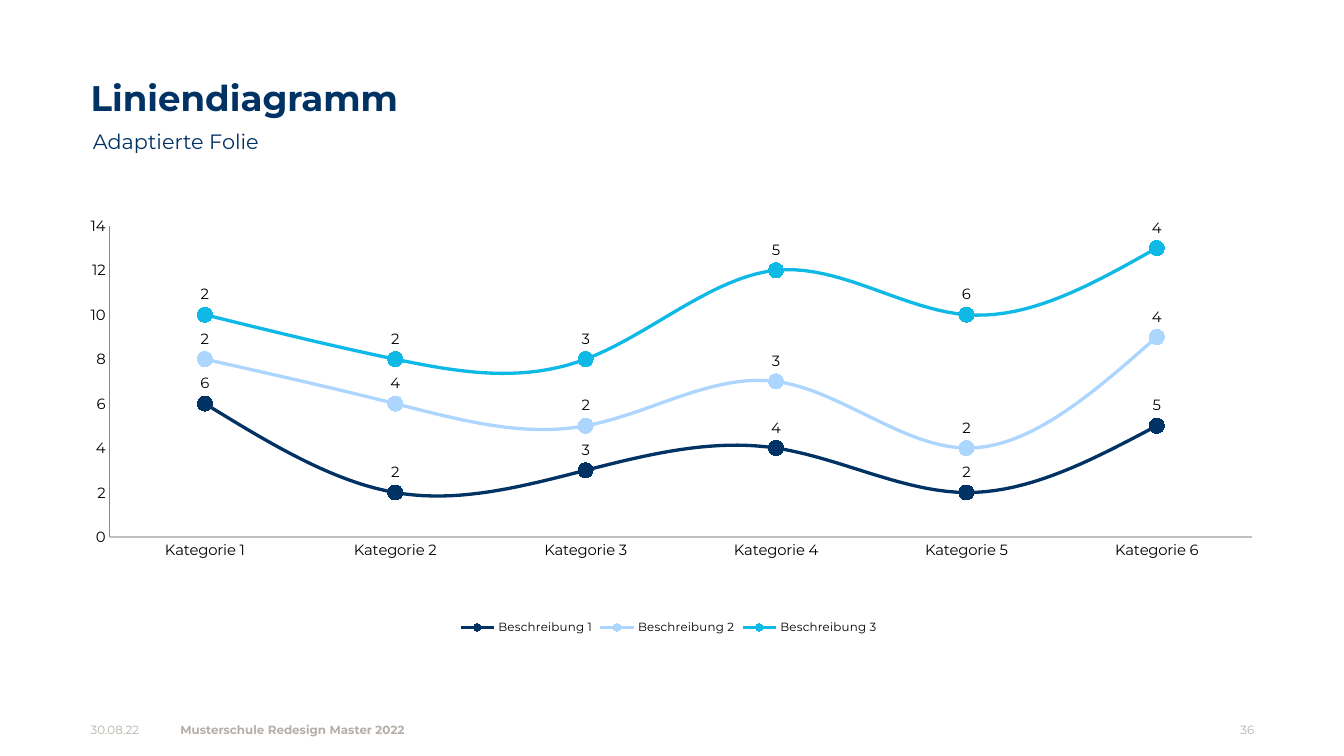
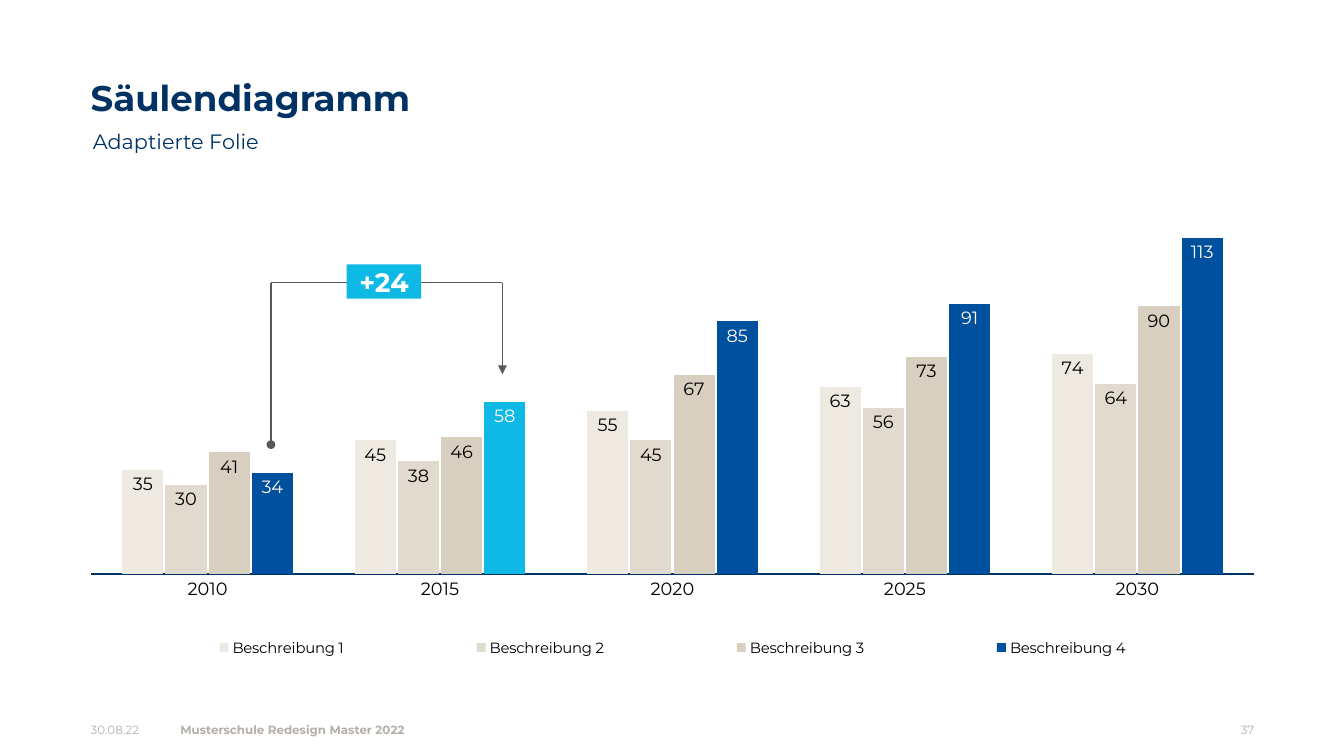
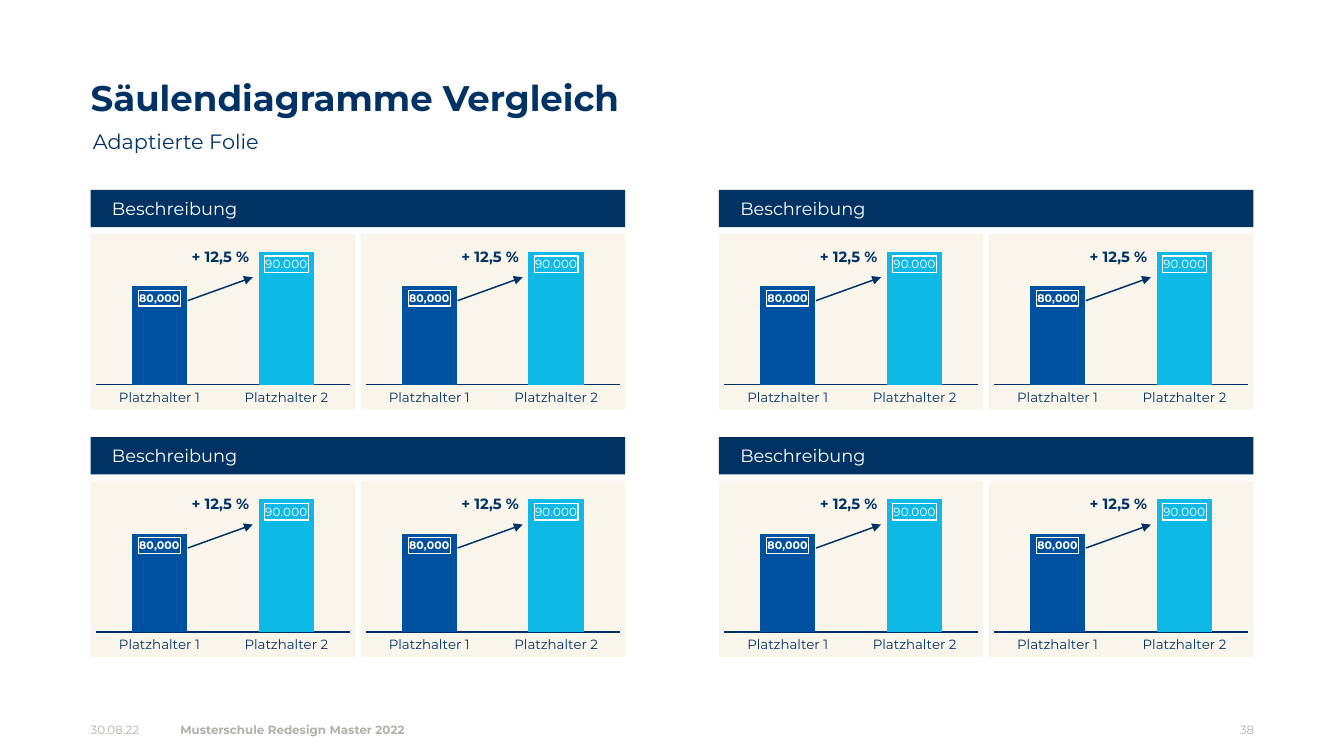
from dataclasses import dataclass

from lxml.etree import SubElement
from pptx import Presentation
from pptx.chart.data import CategoryChartData
from pptx.dml.color import RGBColor
from pptx.enum.chart import (XL_CHART_TYPE, XL_LABEL_POSITION, XL_LEGEND_POSITION,
                             XL_MARKER_STYLE, XL_TICK_LABEL_POSITION, XL_TICK_MARK)
from pptx.enum.shapes import MSO_CONNECTOR, MSO_SHAPE
from pptx.enum.text import MSO_ANCHOR, MSO_AUTO_SIZE, PP_ALIGN
from pptx.oxml.ns import qn
from pptx.util import Emu, Pt


@dataclass(frozen=True)
class Theme:
    font: str = "Montserrat"
    navy: str = "003264"
    blue: str = "0050A0"
    cyan: str = "0FB9E6"
    sky: str = "ADD6FF"
    sand_light: str = "EEEAE1"
    sand: str = "E1DBCF"
    sand_dark: str = "D8CFC1"
    cream: str = "FAF5EB"
    ivory: str = "FFFBF2"
    white: str = "FFFFFF"
    black: str = "000000"
    axis_gray: str = "BFBFBF"
    line_gray: str = "595959"
    footer: str = "B5AFA9"
    title_size: float = 24
    subtitle_size: float = 14
    badge_size: float = 18
    banner_size: float = 12
    column_size: float = 12
    text_size: float = 10
    panel_size: float = 9
    small_size: float = 8
    label_size: float = 7.4


THEME = Theme()
PX = 9144  # 100 px to the inch

# Content
SUBTITLE = "Adaptierte Folie"
DATE = "30.08.22"
FOOTER = "Musterschule Redesign Master 2022"
FIRST_PAGE = 36

LINE_TITLE = "Liniendiagramm"
LINE_CATEGORIES = [f"Kategorie {number}" for number in range(1, 7)]
LINE_SERIES = [
    ("Beschreibung 1", (6, 2, 3, 4, 2, 5), THEME.navy),
    ("Beschreibung 2", (2, 4, 2, 3, 2, 4), THEME.sky),
    ("Beschreibung 3", (2, 2, 3, 5, 6, 4), THEME.cyan),
]

COLUMN_TITLE = "Säulendiagramm"
COLUMN_CATEGORIES = ["2010", "2015", "2020", "2025", "2030"]
COLUMN_SERIES = [
    ("Beschreibung 1", (35, 45, 55, 63, 74), THEME.sand_light),
    ("Beschreibung 2", (30, 38, 45, 56, 64), THEME.sand),
    ("Beschreibung 3", (41, 46, 67, 73, 90), THEME.sand_dark),
    ("Beschreibung 4", (34, 58, 85, 91, 113), THEME.blue),
]
DIFFERENCE = "+24"

COMPARE_TITLE = "Säulendiagramme Vergleich"
BANNER = "Beschreibung"
GROWTH = "+ 12,5 %"
PANEL_CATEGORIES = ["Platzhalter 1", "Platzhalter 2"]
PANEL_SERIES = [("Series 1", (80000, 108000), THEME.navy)]
PANEL_LABEL = "90.000"


# Helpers
def px(*values):
    return [Emu(value * PX) for value in values]


def rgb(color):
    return RGBColor.from_string(color)


def set_fill(part, color):
    part.fill.solid()
    part.fill.fore_color.rgb = rgb(color)


def set_line(line, color, width):
    line.color.rgb = rgb(color)
    line.width = Pt(width)


def set_font(font, size, color=THEME.black, bold=False):
    font.name = THEME.font
    font.size = Pt(size)
    font.bold = bold
    font.color.rgb = rgb(color)


def write_text(shape, text, size, color, bold=False, align=PP_ALIGN.LEFT,
               anchor=MSO_ANCHOR.MIDDLE, left=0, right=0, wrap=True,
               line_spacing=None, bullet=True):
    frame = shape.text_frame
    frame.auto_size = MSO_AUTO_SIZE.NONE
    frame.word_wrap = wrap
    frame.vertical_anchor = anchor
    frame.margin_left, frame.margin_right = px(left, right)
    frame.margin_top = frame.margin_bottom = 0
    frame.text = text
    paragraph = frame.paragraphs[0]
    paragraph.alignment = align
    paragraph.space_before = Pt(0)
    if line_spacing:
        paragraph.line_spacing = Pt(line_spacing)
    if not bullet:
        properties = paragraph._p.get_or_add_pPr()
        properties.set("marL", "0")
        properties.set("indent", "0")
        SubElement(properties, qn("a:buNone"))
    set_font(paragraph.runs[0].font, size, color, bold)


def place(shape, box):
    shape.left, shape.top, shape.width, shape.height = px(*box)


def add_text(shapes, box, text, size, color, **options):
    write_text(shapes.add_textbox(*px(*box)), text, size, color, **options)


def add_box(shapes, box, color, text, size, **options):
    shape = shapes.add_shape(MSO_SHAPE.RECTANGLE, *px(*box))
    shape.shadow.inherit = False
    set_fill(shape, color)
    shape.line.fill.background()
    write_text(shape, text, size, THEME.white, **options)


def add_line(shapes, start, end, color, tail=None):
    connector = shapes.add_connector(MSO_CONNECTOR.STRAIGHT, *px(*start, *end))
    set_line(connector.line, color, 1)
    if tail:
        SubElement(connector.line._get_or_add_ln(), qn("a:tailEnd"), type=tail)
    SubElement(connector._element.spPr, qn("a:effectLst"))


def add_slide(presentation, title, page):
    slide = presentation.slides.add_slide(presentation.slide_layouts[1])
    heading, subtitle = slide.placeholders
    place(heading, (85, 71, 803, 40))
    write_text(heading, title, THEME.title_size, THEME.navy, bold=True,
               anchor=MSO_ANCHOR.TOP)
    place(subtitle, (85, 111, 803, 39))
    write_text(subtitle, SUBTITLE, THEME.subtitle_size, THEME.navy, left=2,
               line_spacing=20, bullet=False)
    for left, width, text, bold, align in (
            (85, 85, DATE, False, PP_ALIGN.LEFT),
            (169, 445, FOOTER, True, PP_ALIGN.LEFT),
            (1091, 85, str(page), False, PP_ALIGN.RIGHT)):
        add_text(slide.shapes, (left, 661, width, 47), text, THEME.small_size,
                 THEME.footer, bold=bold, align=align)
    return slide


# Chart helpers
def set_layout(element, index, x, y, width=None, height=None, inner=False):
    for old in element.findall(qn("c:layout")):
        element.remove(old)
    layout = element.makeelement(qn("c:layout"))
    element.insert(index, layout)
    manual = SubElement(layout, qn("c:manualLayout"))
    entries = [("layoutTarget", "inner")] if inner else []
    entries += [("xMode", "edge"), ("yMode", "edge"), ("x", x), ("y", y)]
    if width:
        entries += [("w", width), ("h", height)]
    for name, value in entries:
        SubElement(manual, qn(f"c:{name}"), val=str(value))


def add_legend(chart, size, **layout):
    chart.has_legend = True
    legend = chart.legend
    legend.position = XL_LEGEND_POSITION.BOTTOM
    legend.include_in_layout = False
    set_font(legend.font, size)
    set_layout(legend._element, 1, **layout)


def add_chart(slide, kind, box, categories, series, plot_box, maximum, size,
              color=THEME.black, axis=(THEME.navy, 1)):
    data = CategoryChartData()
    data.categories = categories
    for name, values, _ in series:
        data.add_series(name, values)
    chart = slide.shapes.add_chart(kind, *px(*box), data).chart
    chart.has_title = False
    chart.has_legend = False
    set_font(chart.font, size, color)
    chart.plots[0].vary_by_categories = False
    set_layout(chart._chartSpace.chart.plotArea, 0, *plot_box, inner=True)
    for chart_axis in (chart.category_axis, chart.value_axis):
        chart_axis.major_tick_mark = XL_TICK_MARK.NONE
        chart_axis.minor_tick_mark = XL_TICK_MARK.NONE
        chart_axis.has_major_gridlines = False
    set_line(chart.category_axis.format.line, *axis)
    chart.value_axis.minimum_scale = 0
    chart.value_axis.maximum_scale = maximum
    return chart


def add_labels(series, position, size, color=THEME.black, bold=False):
    labels = series.data_labels
    labels.show_value = True
    labels.position = position
    set_font(labels.font, size, color, bold)
    return labels


def outline_label(element, color):
    """Give a data label, or a set of them, a thin frame."""
    properties = element.makeelement(qn("c:spPr"))
    line = SubElement(properties, qn("a:ln"), w=str(Pt(0.75)))
    SubElement(SubElement(line, qn("a:solidFill")), qn("a:srgbClr"), val=color)
    followers = (qn("c:txPr"), qn("c:dLblPos"), qn("c:showLegendKey"))
    next(child for child in element if child.tag in followers).addprevious(properties)


# Slides
def build_line_slide(presentation, page):
    slide = add_slide(presentation, LINE_TITLE, page)
    chart = add_chart(slide, XL_CHART_TYPE.LINE_MARKERS_STACKED, (85, 171, 1091, 430),
                      LINE_CATEGORIES, LINE_SERIES, (0.016, 0.095, 0.982, 0.679), 14,
                      THEME.text_size, axis=(THEME.axis_gray, 2))
    chart.value_axis.major_unit = 2
    for series, (_, _, color) in zip(chart.plots[0].series, LINE_SERIES):
        series.smooth = True
        set_line(series.format.line, color, 2.25)
        series.marker.style = XL_MARKER_STYLE.CIRCLE
        series.marker.size = 10
        set_fill(series.marker.format, color)
        series.marker.format.line.color.rgb = rgb(THEME.white)
        add_labels(series, XL_LABEL_POSITION.ABOVE, THEME.text_size)
    add_legend(chart, THEME.small_size, x=0.314, y=0.945)


def build_column_slide(presentation, page):
    slide = add_slide(presentation, COLUMN_TITLE, page)
    chart = add_chart(slide, XL_CHART_TYPE.COLUMN_CLUSTERED, (85, 190, 1091, 432),
                      COLUMN_CATEGORIES, COLUMN_SERIES, (0, 0.032, 1, 0.775), 120,
                      THEME.column_size)
    plot = chart.plots[0]
    plot.gap_width, plot.overlap = 150, -5
    chart.value_axis.tick_label_position = XL_TICK_LABEL_POSITION.NONE
    chart.value_axis.format.line.fill.background()
    for series, (_, _, color) in zip(plot.series, COLUMN_SERIES):
        set_fill(series.format, color)
        label_color = THEME.ivory if color == THEME.blue else THEME.black
        add_labels(series, XL_LABEL_POSITION.INSIDE_END, THEME.column_size, label_color)
    set_fill(plot.series[-1].points[1].format, THEME.cyan)
    add_legend(chart, THEME.text_size, x=0, y=0.932, width=1, height=0.068)

    # Difference bracket between 2010 and 2015
    bracket = slide.shapes.add_group_shape().shapes
    left, right, top = 254, 471, 265
    add_line(bracket, (left, top), (left, 417), THEME.line_gray, tail="oval")
    add_line(bracket, (right, top), (right, 351), THEME.line_gray, tail="triangle")
    add_line(bracket, (left, top), (right, top), THEME.line_gray)
    add_box(bracket, (325, 248, 70, 32), THEME.cyan, DIFFERENCE, THEME.badge_size,
            bold=True, align=PP_ALIGN.CENTER, wrap=False)


def add_panel(slide, left, top):
    chart = add_chart(slide, XL_CHART_TYPE.COLUMN_STACKED, (left, top, 248, 165),
                      PANEL_CATEGORIES, PANEL_SERIES, (0.02, 0.02, 0.96, 0.84), 120000,
                      THEME.panel_size, THEME.navy)
    area = chart._chartSpace
    background = area.makeelement(qn("c:spPr"))
    area.chart.addnext(background)
    fill = SubElement(background, qn("a:solidFill"))
    SubElement(fill, qn("a:srgbClr"), val=THEME.cream)
    SubElement(SubElement(background, qn("a:ln")), qn("a:noFill"))
    chart.value_axis.visible = False
    plot = chart.plots[0]
    plot.gap_width, plot.overlap = 129, 100

    # Columns and framed labels
    series = plot.series[0]
    set_fill(series.format, THEME.navy)
    for point, color in enumerate((THEME.blue, THEME.cyan)):
        set_fill(series.points[point].format, color)
    labels = add_labels(series, XL_LABEL_POSITION.INSIDE_END, THEME.label_size,
                        THEME.white, bold=True)
    labels.number_format = "#,##0"
    labels.number_format_is_linked = False
    outline_label(labels._element, THEME.white)
    label = series.points[1].data_label
    label.text_frame.text = PANEL_LABEL
    set_font(label.text_frame.paragraphs[0].runs[0].font, THEME.small_size, THEME.white)
    label.position = XL_LABEL_POSITION.INSIDE_END
    outline_label(labels._element.find(qn("c:dLbl")), THEME.white)

    # Growth arrow
    add_line(slide.shapes, (left + 91, top + 63), (left + 152, top + 41), THEME.navy,
             tail="triangle")
    add_text(slide.shapes, (left + 83, top + 8, 77, 27), GROWTH, THEME.text_size,
             THEME.navy, bold=True, align=PP_ALIGN.CENTER)


def build_compare_slide(presentation, page):
    slide = add_slide(presentation, COMPARE_TITLE, page)
    for top in (178, 410):
        for left in (85, 674):
            add_box(slide.shapes, (left, top, 501, 35), THEME.navy, BANNER,
                    THEME.banner_size, left=20, right=16)
            for column in range(2):
                add_panel(slide, left + column * 253, top + 41)


def main():
    presentation = Presentation()
    presentation.slide_width, presentation.slide_height = px(1260, 709)
    builders = (build_line_slide, build_column_slide, build_compare_slide)
    for page, build in enumerate(builders, FIRST_PAGE):
        build(presentation, page)
    presentation.save("out.pptx")


if __name__ == "__main__":
    main()
